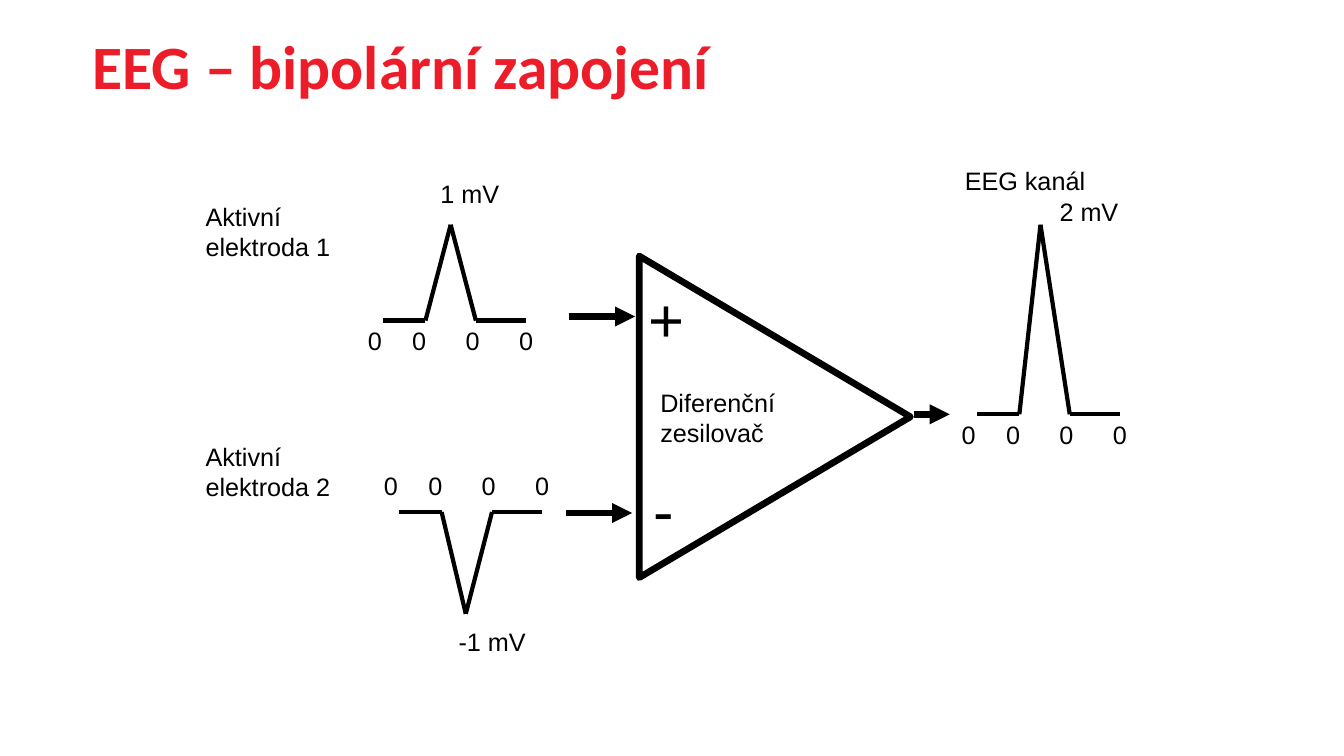
from dataclasses import dataclass
from itertools import pairwise

import pptx
import pptx.dml.color
import pptx.enum.shapes
import pptx.enum.text
import pptx.oxml.ns
import pptx.shapes.shapetree
import pptx.slide
import pptx.text.text
import pptx.util
from lxml import etree

EMU_PER_PX = 9144


@dataclass(frozen=True)
class Theme:
    title_color: str = "ED1C29"
    ink: str = "000000"
    title_font: str = "Calibri"
    text_font: str = "Arial"
    large_size: int = 44
    label_size: int = 18
    thick_line: float = 4.75
    wave_line: float = 3


@dataclass(frozen=True)
class Label:
    text: str
    left: int
    top: int
    width: int
    height: int
    wrap: bool = True
    size: int = Theme.label_size


@dataclass(frozen=True)
class Arrow:
    start: int
    end: int
    y: int


@dataclass(frozen=True)
class Wave:
    left: int
    baseline: int
    apex_offset: int
    apex_y: int
    zeros_top: int
    peak: Label


THEME = Theme()
WAVE_WIDTH = 142
SPIKE_START, SPIKE_END = 42, 92
ZERO_OFFSETS = (-25, 19, 72, 125)

WAVES = (
    Wave(380, 318, 67, 223, 318, Label("1 mV", 427, 172, 79, 40, False)),
    Wave(396, 508, 66, 609, 462, Label("-1 mV", 445, 616, 88, 40, False)),
    Wave(969, 411, 63, 223, 411, Label("2 mV", 1041, 190, 79, 40, False)),
)
ARROWS = (Arrow(564, 630, 314), Arrow(561, 627, 509), Arrow(907, 942, 411))
INPUT_SIGNS = (
    Label("+", 633, 274, 56, 84, False, THEME.large_size),
    Label("-", 638, 463, 41, 84, False, THEME.large_size),
)
CAPTIONS = (
    Label("Aktivní elektroda 1", 194, 195, 179, 71),
    Label("EEG kanál", 947, 159, 241, 40),
    Label("Diferenční zesilovač", 645, 379, 241, 71),
    Label("Aktivní elektroda 2", 194, 433, 179, 71),
)


def px(value: int) -> pptx.util.Emu:
    return pptx.util.Emu(value * EMU_PER_PX)


def color(value: str) -> pptx.dml.color.RGBColor:
    return pptx.dml.color.RGBColor.from_string(value)


def format_paragraph(paragraph: pptx.text.text._Paragraph, font_name: str,
                     size: int, ink: str, bold: bool = False) -> None:
    paragraph.alignment = pptx.enum.text.PP_ALIGN.LEFT
    paragraph.font.name = font_name
    paragraph.font.size = pptx.util.Pt(size)
    paragraph.font.bold = bold
    paragraph.font.color.rgb = color(ink)


def add_title(slide: pptx.slide.Slide, text: str) -> None:
    title = slide.shapes.title
    title.left, title.top, title.width, title.height = map(px, (82, 23, 931, 84))
    frame = title.text_frame
    frame.text = text
    frame.word_wrap = True
    frame.auto_size = pptx.enum.text.MSO_AUTO_SIZE.SHAPE_TO_FIT_TEXT
    frame.vertical_anchor = pptx.enum.text.MSO_ANCHOR.TOP
    format_paragraph(frame.paragraphs[0], THEME.title_font, THEME.large_size,
                     THEME.title_color, bold=True)


def add_label(shapes: pptx.shapes.shapetree._BaseGroupShapes, label: Label) -> None:
    box = shapes.add_textbox(px(label.left), px(label.top), px(label.width), px(label.height))
    frame = box.text_frame
    frame.text = label.text
    frame.word_wrap = label.wrap
    frame.auto_size = pptx.enum.text.MSO_AUTO_SIZE.SHAPE_TO_FIT_TEXT
    format_paragraph(frame.paragraphs[0], THEME.text_font, label.size, THEME.ink)


def add_line(shapes: pptx.shapes.shapetree._BaseGroupShapes, start: tuple[int, int],
             end: tuple[int, int], width: float, arrowhead: bool = False) -> None:
    connector = shapes.add_connector(
        pptx.enum.shapes.MSO_CONNECTOR.STRAIGHT, *map(px, (*start, *end)))
    connector.line.color.rgb = color(THEME.ink)
    connector.line.width = pptx.util.Pt(width)
    properties = connector._element.spPr
    if arrowhead:
        outline = properties.find(pptx.oxml.ns.qn("a:ln"))
        etree.SubElement(outline, pptx.oxml.ns.qn("a:tailEnd"), type="triangle")
    etree.SubElement(properties, pptx.oxml.ns.qn("a:effectLst"))


def add_amplifier(slide: pptx.slide.Slide) -> None:
    triangle = slide.shapes.add_shape(
        pptx.enum.shapes.MSO_SHAPE.ISOSCELES_TRIANGLE, *map(px, (609, 279, 319, 269)))
    triangle.rotation = 90
    triangle.adjustments[0] = 0.5
    triangle.shadow.inherit = False
    triangle.fill.background()
    triangle.line.color.rgb = color(THEME.ink)
    triangle.line.width = pptx.util.Pt(THEME.thick_line)
    outline = triangle._element.spPr.find(pptx.oxml.ns.qn("a:ln"))
    etree.SubElement(outline, pptx.oxml.ns.qn("a:round"))


def add_wave(slide: pptx.slide.Slide, wave: Wave) -> None:
    shapes = slide.shapes.add_group_shape().shapes
    points = (
        (wave.left, wave.baseline),
        (wave.left + SPIKE_START, wave.baseline),
        (wave.left + wave.apex_offset, wave.apex_y),
        (wave.left + SPIKE_END, wave.baseline),
        (wave.left + WAVE_WIDTH, wave.baseline),
    )
    for start, end in pairwise(points):
        add_line(shapes, start, end, THEME.wave_line)
    add_label(shapes, wave.peak)
    for offset in ZERO_OFFSETS:
        add_label(shapes, Label("0", wave.left + offset, wave.zeros_top, 34, 40, False))


def main() -> None:
    presentation = pptx.Presentation()
    presentation.slide_width = pptx.util.Inches(13.33)
    presentation.slide_height = pptx.util.Inches(7.5)
    slide = presentation.slides.add_slide(presentation.slide_layouts[5])
    add_title(slide, "EEG – bipolární zapojení")
    add_amplifier(slide)
    for arrow in ARROWS:
        add_line(slide.shapes, (arrow.start, arrow.y), (arrow.end, arrow.y),
                 THEME.thick_line, arrowhead=True)
    for wave in WAVES:
        add_wave(slide, wave)
    for label in INPUT_SIGNS + CAPTIONS:
        add_label(slide.shapes, label)
    presentation.save("out.pptx")


if __name__ == "__main__":
    main()
